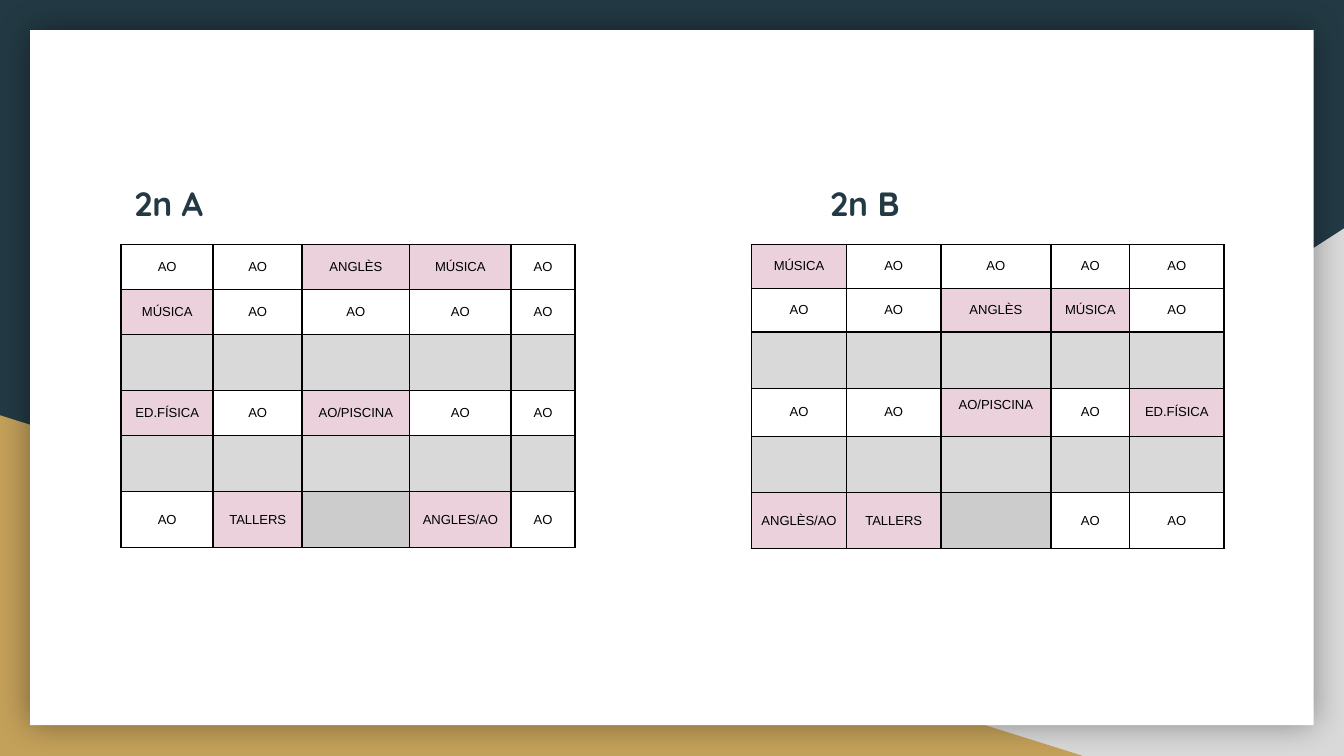
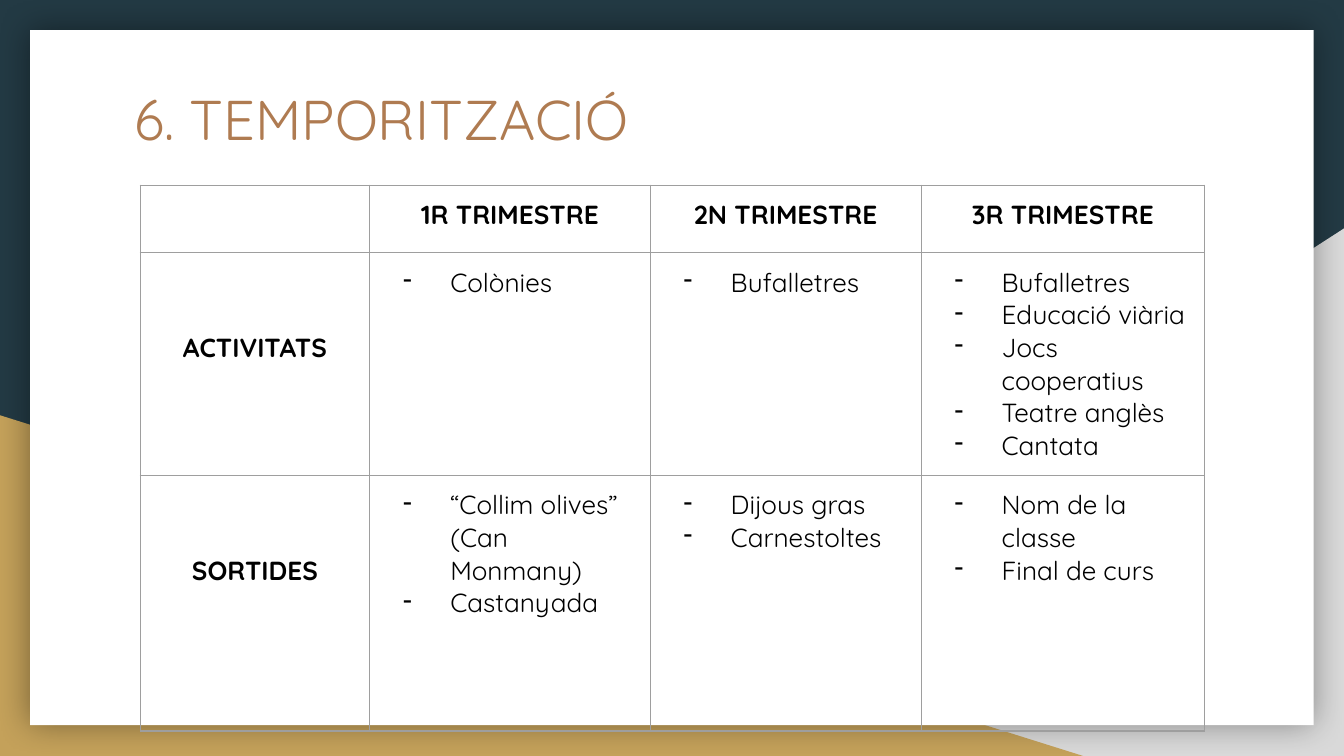
from lxml import etree
from pptx import Presentation
from pptx.dml.color import RGBColor
from pptx.enum.shapes import MSO_SHAPE
from pptx.enum.text import MSO_ANCHOR, PP_ALIGN
from pptx.oxml.ns import qn
from pptx.util import Cm, Pt

RECT, WEDGE = MSO_SHAPE.RECTANGLE, MSO_SHAPE.RIGHT_TRIANGLE
TOP, MIDDLE = MSO_ANCHOR.TOP, MSO_ANCHOR.MIDDLE
LEFT, CENTER = PP_ALIGN.LEFT, PP_ALIGN.CENTER

COLORS = {
    "navy": "233A44", "gold": "C4A15A", "silver": "D9D9D9", "white": "FFFFFF",
    "copper": "AF7B51", "black": "000000", "line": "9E9E9E",
    "pink": "EAD1DC", "gray": "CCCCCC",
}
HEAD, BODY = "Quicksand", "Arial"
WIDE, HIGH = 25.4, 14.29
PAD = 0.25
LINE = 0.62  # height of one 14 pt line

GROUP_A = [
    ["AO", "AO", "ANGLÈS", "MÚSICA", "AO"],
    ["MÚSICA", "AO", "AO", "AO", "AO"],
    [""] * 5,
    ["ED.FÍSICA", "AO", "AO/PISCINA", "AO", "AO"],
    [""] * 5,
    ["AO", "TALLERS", "", "ANGLES/AO", "AO"],
]
GROUP_B = [
    ["MÚSICA", "AO", "AO", "AO", "AO"],
    ["AO", "AO", "ANGLÈS", "MÚSICA", "AO"],
    [""] * 5,
    ["AO", "AO", "AO/PISCINA", "AO", "ED.FÍSICA"],
    [""] * 5,
    ["ANGLÈS/AO", "TALLERS", "", "AO", "AO"],
]
TERMS = ["1R TRIMESTRE", "2N TRIMESTRE", "3R TRIMESTRE"]
PLAN = {
    "ACTIVITATS": [
        ["Colònies"],
        ["Bufalletres"],
        ["Bufalletres", "Educació viària", "Jocs cooperatius",
         "Teatre anglès", "Cantata"],
    ],
    "SORTIDES": [
        ["“Collim olives” (Can Monmany)", "Castanyada"],
        ["Dijous gras", "Carnestoltes"],
        ["Nom de la classe", "Final de curs"],
    ],
}


def rgb(name):
    return RGBColor.from_string(COLORS[name])


def put_run(para, text, size, font, color="black", bold=False, align=LEFT):
    para.alignment = align
    run = para.add_run()
    run.text = text
    run.font.size, run.font.name, run.font.bold = Pt(size), font, bold
    run.font.color.rgb = rgb(color)


def set_pad(part, pad):
    part.margin_left = part.margin_right = Cm(pad)
    part.margin_top = part.margin_bottom = Cm(pad)


def add_panel(slide, kind, box, color):
    panel = slide.shapes.add_shape(kind, *map(Cm, box))
    panel.shadow.inherit = False
    panel.fill.solid()
    panel.fill.fore_color.rgb = rgb(color)
    panel.line.fill.background()
    return panel


def add_glow(panel):
    effects = panel._element.spPr.find(qn("a:effectLst"))
    glow = etree.SubElement(effects, qn("a:outerShdw"), blurRad=str(Pt(18)),
                            dist="0", algn="ctr", rotWithShape="0")
    tint = etree.SubElement(glow, qn("a:srgbClr"), val=COLORS["black"])
    etree.SubElement(tint, qn("a:alpha"), val="40000")


def dress_master(master, slide):
    """Draw the backdrop on the slide, then move it to the master."""
    fill = master.background.fill
    fill.solid()
    fill.fore_color.rgb = rgb("navy")
    right = add_panel(slide, WEDGE, (9.96, 4.32, WIDE - 9.96, HIGH - 4.32), "silver")
    right._element.spPr.find(qn("a:xfrm")).set("flipH", "1")
    left = add_panel(slide, WEDGE, (0, 7.85, 20.47, HIGH - 7.85), "gold")
    page = add_panel(slide, RECT, (0.57, 0.57, WIDE - 1.14, 13.14), "white")
    add_glow(page)
    for spot, panel in enumerate((right, left, page), 2):
        master.shapes._spTree.insert(spot, panel._element)


def set_edges(cell, color, width):
    props = cell._tc.get_or_add_tcPr()
    for spot, side in enumerate(("lnL", "lnR", "lnT", "lnB")):
        edge = etree.Element(qn(f"a:{side}"), w=str(Pt(width)))
        paint = etree.SubElement(edge, qn("a:solidFill"))
        etree.SubElement(paint, qn("a:srgbClr"), val=COLORS[color])
        props.insert(spot, edge)


def add_grid(slide, left, top, cols, rows, color, width):
    """Add a plain table with the given column widths and row heights in cm."""
    table = slide.shapes.add_table(
        len(rows), len(cols), Cm(left), Cm(top), Cm(sum(cols)), Cm(sum(rows))).table
    table.first_row = table.horz_banding = False
    for col, size in zip(table.columns, cols):
        col.width = Cm(size)
    for row, size in zip(table.rows, rows):
        row.height = Cm(size)
    for cell in table.iter_cells():
        set_edges(cell, color, width)
        cell.fill.background()
    return table


def shade(text, row):
    """Pick a fill: breaks are silver, gaps gray, special lessons pink."""
    if not any(row):
        return "silver"
    if not text:
        return "gray"
    return None if text == "AO" else "pink"


def add_week(slide, left, top, cols, rows, lessons, raised=()):
    table = add_grid(slide, left, top, cols, rows, "black", 1)
    for r, row in enumerate(lessons):
        for c, text in enumerate(row):
            cell, color = table.cell(r, c), shade(text, row)
            if color:
                cell.fill.solid()
                cell.fill.fore_color.rgb = rgb(color)
            if text:
                set_pad(cell, 0.17)
                cell.vertical_anchor = TOP if (r, c) in raised else MIDDLE
                put_run(cell.text_frame.paragraphs[0], text, 7, BODY, align=CENTER)


def add_label(slide, left, top, text):
    frame = slide.shapes.add_textbox(Cm(left), Cm(top), Cm(4.7), Cm(1.27)).text_frame
    frame.word_wrap = True
    set_pad(frame, PAD)
    put_run(frame.paragraphs[0], text, 18, HEAD, "navy", True)


def add_dash(para):
    props = para._p.get_or_add_pPr()
    props.set("marL", str(Cm(1.27)))
    props.set("indent", str(Cm(-0.89)))
    tint = etree.SubElement(props, qn("a:buClr"))
    etree.SubElement(tint, qn("a:srgbClr"), val=COLORS["black"])
    etree.SubElement(props, qn("a:buChar"), char="-")


def fill_list(cell, items):
    frame = cell.text_frame
    for spot, item in enumerate(items):
        para = frame.add_paragraph() if spot else frame.paragraphs[0]
        put_run(para, item, 14, HEAD)
        add_dash(para)


def add_plan(slide, left, top):
    table = add_grid(slide, left, top, [4.34, 5.3, 5.12, 5.36],
                     [1.22, 4.21, 4.83], "line", 0.75)
    for cell in table.iter_cells():
        set_pad(cell, PAD)
    for c, term in enumerate(TERMS, 1):
        put_run(table.cell(0, c).text_frame.paragraphs[0], term, 14, HEAD,
                bold=True, align=CENTER)
    for r, (name, lists) in enumerate(PLAN.items(), 1):
        head = table.cell(r, 0)
        head.margin_top = Cm(PAD + 2 * LINE)
        put_run(head.text_frame.paragraphs[0], name, 14, HEAD,
                bold=True, align=CENTER)
        for c, items in enumerate(lists, 1):
            fill_list(table.cell(r, c), items)


def set_title(slide, box, text):
    title = slide.shapes.title
    title.left, title.top, title.width, title.height = map(Cm, box)
    frame = title.text_frame
    frame.word_wrap = True
    frame.vertical_anchor = TOP
    set_pad(frame, PAD)
    put_run(frame.paragraphs[0], text, 30, HEAD, "copper")


def fill_weeks(slide):
    top = 4.62
    add_week(slide, 2.29, top, [1.74, 1.68, 2.03, 1.92, 1.21],
             [0.85, 0.85, 1.06, 0.85, 1.06, 1.06], GROUP_A)
    add_week(slide, 14.2, top, [1.8, 1.78, 2.08, 1.49, 1.78],
             [0.83, 0.83, 1.06, 0.91, 1.06, 1.06], GROUP_B, raised=[(3, 2)])
    add_label(slide, 2.29, top - 1.42, "2n A")
    add_label(slide, 15.44, top - 1.42, "2n B")


def fill_terms(slide):
    set_title(slide, (2.29, 1.35, 13.18, 2.64), "6. TEMPORITZACIÓ")
    add_plan(slide, 2.65, 3.5)


def main():
    deck = Presentation()
    deck.slide_width, deck.slide_height = Cm(WIDE), Cm(HIGH)
    weeks = deck.slides.add_slide(deck.slide_layouts.get_by_name("Blank"))
    dress_master(deck.slide_master, weeks)
    fill_weeks(weeks)
    fill_terms(deck.slides.add_slide(deck.slide_layouts.get_by_name("Title Only")))
    deck.save("out.pptx")


if __name__ == "__main__":
    main()
